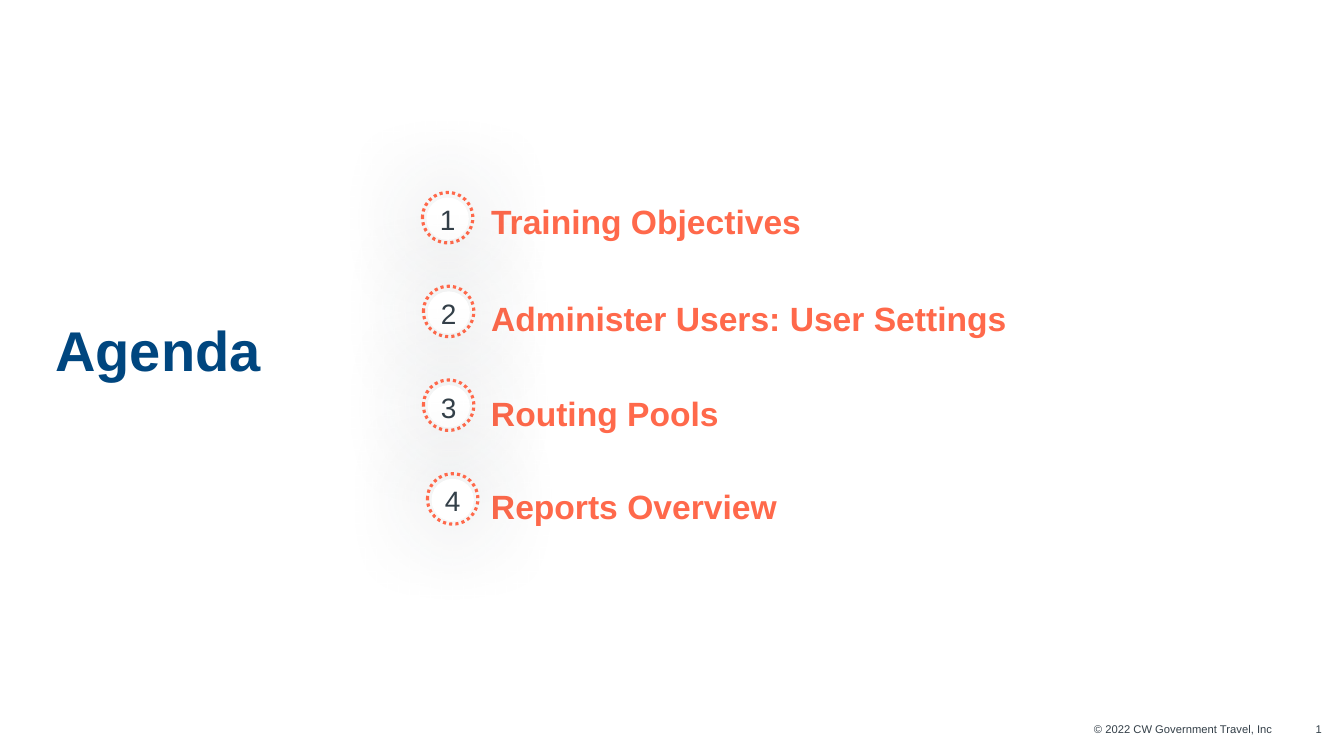
"""Build the agenda slide with four numbered topics."""
import pptx
import pptx.dml.color
import pptx.enum.dml
import pptx.enum.shapes
import pptx.enum.text
import pptx.oxml
import pptx.oxml.ns
import pptx.util
from pptx.util import Inches

NAVY = pptx.dml.color.RGBColor(0x00, 0x46, 0x7F)
CORAL = pptx.dml.color.RGBColor(0xFF, 0x69, 0x4B)
SLATE = pptx.dml.color.RGBColor(0x33, 0x3F, 0x48)
WHITE = pptx.dml.color.RGBColor(0xFF, 0xFF, 0xFF)

ALIGN = pptx.enum.text.PP_ALIGN
ANCHOR = pptx.enum.text.MSO_ANCHOR

TOPICS = [
    ("Training Objectives", 4.19, 2, 4.41),
    ("Administer Users: User Settings", 4.2, 2.96, 7.41),
    ("Routing Pools", 4.2, 3.9, 7.37),
    ("Reports Overview", 4.24, 4.83, 7),
]
TOPIC_LEFT = 4.87
FIRST_BADGE_TOP = 1.91
BADGE_PITCH = 0.93


def add_text(shapes, text, left, top, width, height, *, size, color, bold=False,
             align=ALIGN.LEFT, anchor=ANCHOR.TOP, wrap=True,
             line_spacing=None, space_after=None):
    """Add a text box without margins and return it."""
    box = shapes.add_textbox(Inches(left), Inches(top), Inches(width), Inches(height))
    frame = box.text_frame
    frame.margin_left = frame.margin_right = frame.margin_top = frame.margin_bottom = 0
    frame.word_wrap = wrap
    frame.vertical_anchor = anchor
    paragraph = frame.paragraphs[0]
    paragraph.alignment = align
    paragraph.line_spacing = line_spacing
    paragraph.space_after = space_after
    run = paragraph.add_run()
    run.text = text
    run.font.name = "Arial"
    run.font.size = pptx.util.Pt(size)
    run.font.bold = bold
    run.font.color.rgb = color
    return box


def add_circle(shapes, left, top, diameter):
    """Add a circle without shadow and return it."""
    circle = shapes.add_shape(pptx.enum.shapes.MSO_SHAPE.OVAL, Inches(left), Inches(top),
                              Inches(diameter), Inches(diameter))
    circle.shadow.inherit = False
    return circle


def add_glow_shadow(shape, color, blur, opacity):
    """Give a shape a centred soft shadow."""
    effects = shape._element.spPr.find(pptx.oxml.ns.qn("a:effectLst"))
    effects.append(pptx.oxml.parse_xml(
        f'<a:outerShdw {pptx.oxml.ns.nsdecls("a")} blurRad="{pptx.util.Pt(blur)}" '
        f'dist="0" dir="0" algn="ctr" rotWithShape="0"><a:srgbClr val="{color}">'
        f'<a:alpha val="{opacity * 1000}"/></a:srgbClr></a:outerShdw>'))


def add_badge(slide, number, left, top):
    """Add a grouped number inside a dotted ring."""
    badge = slide.shapes.add_group_shape().shapes
    disc = add_circle(badge, left + 0.04, top + 0.05, 0.42)
    disc.fill.solid()
    disc.fill.fore_color.rgb = WHITE
    disc.line.fill.background()
    add_glow_shadow(disc, SLATE, blur=70, opacity=40)
    ring = add_circle(badge, left, top, 0.5)
    ring.fill.background()
    ring.line.color.rgb = CORAL
    ring.line.width = pptx.util.Pt(2.25)
    ring.line.dash_style = pptx.enum.dml.MSO_LINE.ROUND_DOT
    add_text(badge, str(number), left + 0.07, top + 0.1, 0.36, 0.34, size=20,
             color=SLATE, align=ALIGN.CENTER, wrap=False)


def main():
    """Build and save the slide."""
    deck = pptx.Presentation()
    deck.slide_width = Inches(13.33)
    deck.slide_height = Inches(7.5)
    slide = deck.slides.add_slide(deck.slide_layouts[6])

    footer = {"size": 8, "color": SLATE, "align": ALIGN.RIGHT}
    add_text(slide.shapes, "© 2022 CW Government Travel, Inc", 8.38, 7.17, 4.24, 0.14, **footer)
    add_text(slide.shapes, "1", 12.88, 7.17, 0.23, 0.14, **footer)

    for index, (topic, badge_left, topic_top, topic_width) in enumerate(TOPICS):
        add_text(slide.shapes, topic, TOPIC_LEFT, topic_top, topic_width, 0.5, size=24,
                 color=CORAL, bold=True, anchor=ANCHOR.MIDDLE, line_spacing=0.65,
                 space_after=pptx.util.Pt(10))
        add_badge(slide, index + 1, badge_left, FIRST_BADGE_TOP + index * BADGE_PITCH)

    add_text(slide.shapes, "Agenda", 0.55, 0.71, 3.5, 5.5, size=40, color=NAVY,
             bold=True, anchor=ANCHOR.MIDDLE)
    deck.save("out.pptx")


if __name__ == "__main__":
    main()
